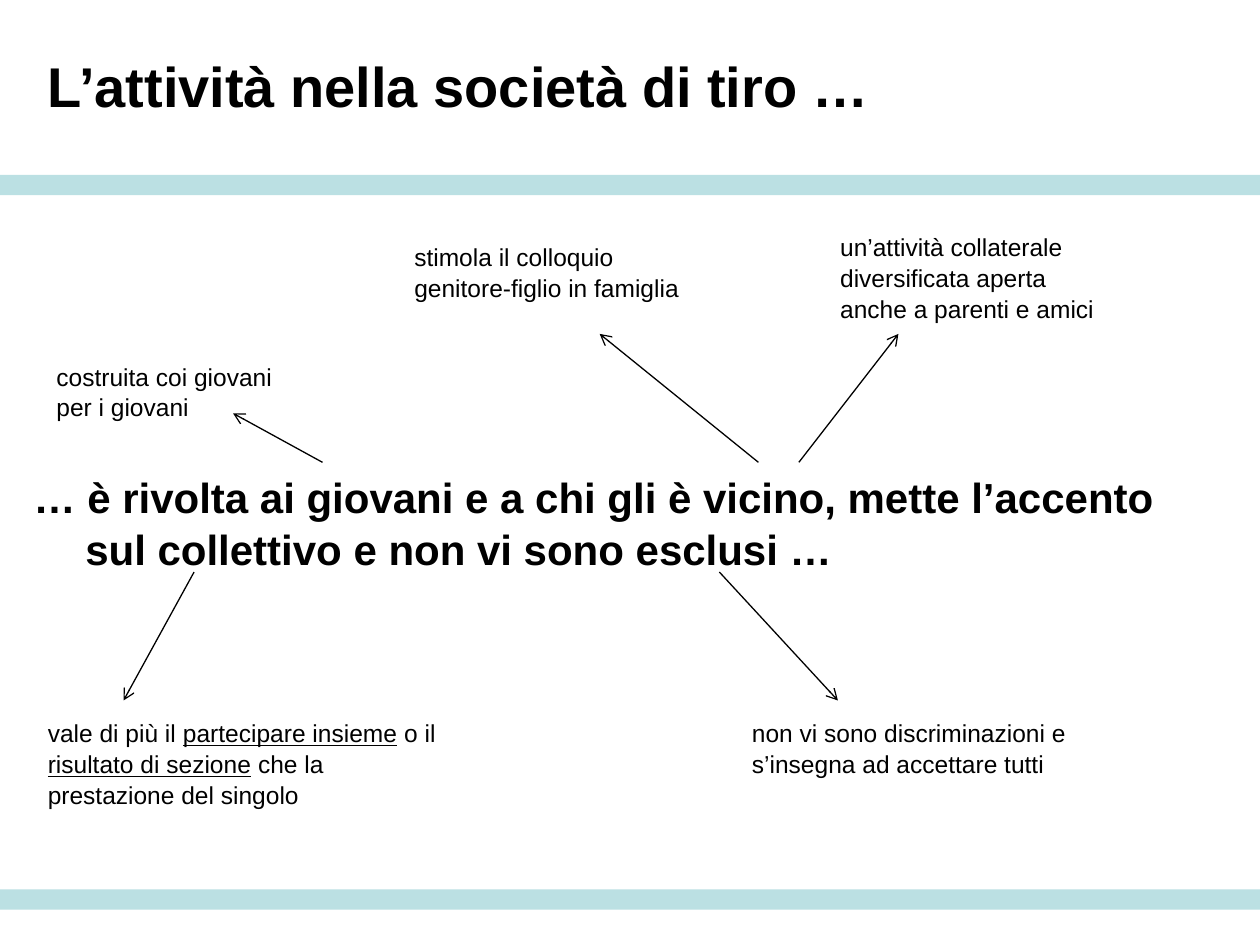
"""Build a slide on the activity of a shooting club, with a central statement and five notes."""
from lxml import etree
from pptx import Presentation
from pptx import util as u
from pptx.dml.color import RGBColor
from pptx.enum import shapes, text
from pptx.oxml.ns import qn

THEME = {
    "font": "Arial", "ink": RGBColor(0, 0, 0), "band": RGBColor(0xBB, 0xE0, 0xE3),
    "title": 32, "statement": 24, "note": 14, "line": 0.75, "spacing": 1.05,
}
WIDTH, HEIGHT = 720, 540
BAND_TOPS, BAND_HEIGHT = (100, 508.3), 11.5
HANGING = 29.5

TITLE = ("L’attività nella società di tiro …", (20.2, 3.6, 612.7, 90))
STATEMENT = ("… è rivolta ai giovani e a chi gli è vicino, mette l’accento "
             "sul collettivo e non vi sono esclusi …", (12.2, 264.2, 695.5, 65.5))
UNDERLINED = ("partecipare insieme", "risultato di sezione")
NOTES = [
    (["un’attività collaterale diversificata aperta anche a parenti e amici"],
     (473, 128.2, 164.2, 58.3), (456.5, 264.2), (513.4, 190.8)),
    (["costruita coi giovani per i giovani"],
     (25.2, 202.3, 153.4, 41), (184.3, 264.2), (133.2, 236.2)),
    (["vale di più il ", UNDERLINED[0], " o il ", UNDERLINED[1], " che la prestazione del singolo"],
     (20.2, 406.1, 238.3, 58.3), (110.9, 326.9), (70.6, 400.3)),
    (["non vi sono discriminazioni e s’insegna ad accettare tutti"],
     (422.6, 406.1, 241.2, 41), (411.1, 326.9), (478.8, 400.3)),
    (["stimola il colloquio genitore-figlio in famiglia"],
     (229.7, 133.9, 169.9, 41), (433.4, 264.2), (342.7, 190.8)),
]


def points(values):
    return [u.Pt(value) for value in values]


def write(shape, runs, size, bold=False, anchor=text.MSO_ANCHOR.TOP, hanging=0, spacing=None):
    frame = shape.text_frame
    frame.word_wrap = True
    frame.auto_size = text.MSO_AUTO_SIZE.NONE
    frame.vertical_anchor = anchor
    paragraph = frame.paragraphs[0]
    paragraph.alignment = text.PP_ALIGN.LEFT
    paragraph.line_spacing = spacing
    if hanging:
        properties = paragraph._p.get_or_add_pPr()
        properties.set("marL", str(u.Pt(hanging)))
        properties.set("indent", str(-u.Pt(hanging)))
    for words in runs:
        run = paragraph.add_run()
        run.text = words
        font = run.font
        font.name, font.size, font.bold = THEME["font"], u.Pt(size), bold
        font.color.rgb = THEME["ink"]
        if words in UNDERLINED:
            font.underline = True


def add_band(slide, top):
    band = slide.shapes.add_shape(
        shapes.MSO_SHAPE.RECTANGLE, *points((0, top, WIDTH, BAND_HEIGHT)))
    band.shadow.inherit = False
    band.fill.solid()
    band.fill.fore_color.rgb = THEME["band"]
    band.line.fill.background()


def add_arrow(slide, start, end):
    arrow = slide.shapes.add_connector(shapes.MSO_CONNECTOR.STRAIGHT, *points(start + end))
    arrow.line.color.rgb = THEME["ink"]
    arrow.line.width = u.Pt(THEME["line"])
    etree.SubElement(arrow.line._get_or_add_ln(), qn("a:tailEnd"), type="arrow")
    etree.SubElement(arrow._element.spPr, qn("a:effectLst"))


def main():
    presentation = Presentation()
    presentation.slide_width, presentation.slide_height = points((WIDTH, HEIGHT))
    slide = presentation.slides.add_slide(presentation.slide_layouts.get_by_name("Title Only"))

    for top in BAND_TOPS:
        add_band(slide, top)

    words, box = TITLE
    title = slide.shapes.title
    title.left, title.top, title.width, title.height = points(box)
    write(title, [words], THEME["title"], bold=True, anchor=text.MSO_ANCHOR.MIDDLE)

    words, box = STATEMENT
    write(slide.shapes.add_textbox(*points(box)), [words], THEME["statement"],
          bold=True, hanging=HANGING, spacing=THEME["spacing"])

    for runs, box, start, end in NOTES:
        write(slide.shapes.add_textbox(*points(box)), runs, THEME["note"],
              spacing=THEME["spacing"])
        add_arrow(slide, start, end)

    presentation.save("out.pptx")


if __name__ == "__main__":
    main()
